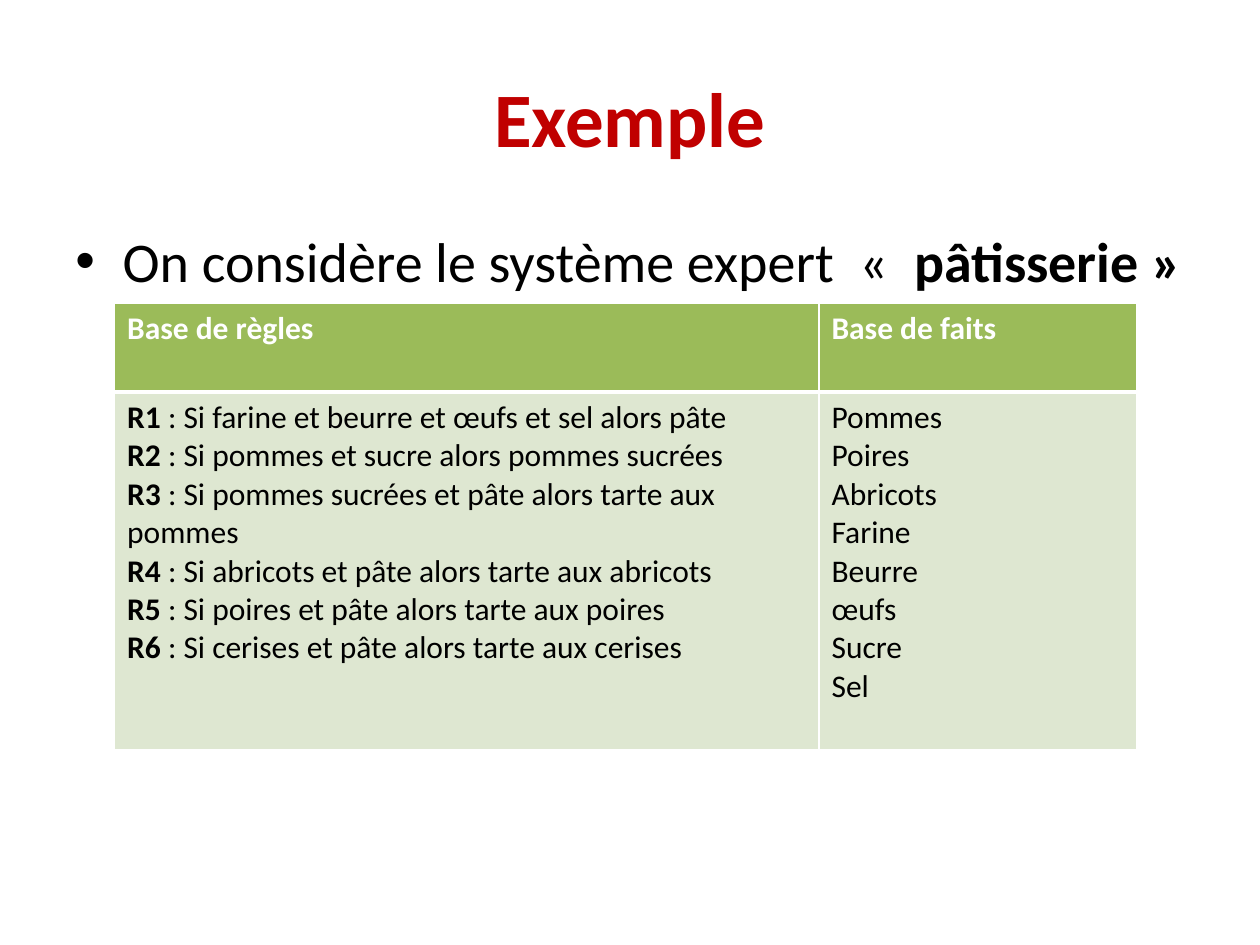
from lxml.etree import SubElement
from pptx import Presentation
from pptx.dml.color import RGBColor
from pptx.enum.text import MSO_ANCHOR, PP_ALIGN
from pptx.oxml.ns import qn
from pptx.util import Pt

COLORS = {"title": "C00000", "text": "000000", "white": "FFFFFF",
          "header": "9BBB59", "body": "DEE7D1"}
FONT = "Calibri"

TITLE = "Exemple"
INTRO = [("On considère le système expert  « ", False), (" pâtisserie »", True)]
HEADINGS = ["Base de règles", "Base de faits"]
RULES = [
    "Si farine et beurre et œufs et sel alors pâte",
    "Si pommes et sucre alors pommes sucrées",
    "Si pommes sucrées et pâte alors tarte aux pommes",
    "Si abricots et pâte alors tarte aux abricots",
    "Si poires et pâte alors tarte aux poires",
    "Si cerises et pâte alors tarte aux cerises",
]
FACTS = ["Pommes", "Poires", "Abricots", "Farine", "Beurre", "œufs", "Sucre", "Sel"]

COLUMN_WIDTHS = [402.5, 181.5]
ROW_HEIGHTS = [50.5, 204.5]
THIN, THICK = 1, 3


def add_spans(para, spans, size, color):
    for text, bold in spans:
        span = para.add_run()
        span.text = text
        span.font.name = FONT
        span.font.size = Pt(size)
        span.font.bold = bold
        span.font.color.rgb = RGBColor.from_string(COLORS[color])


def add_box(page, left, top, width, height, anchor):
    box = page.shapes.add_textbox(Pt(left), Pt(top), Pt(width), Pt(height))
    frame = box.text_frame
    frame.word_wrap = True
    frame.vertical_anchor = anchor
    return frame.paragraphs[0]


def add_bullet(para, indent):
    properties = para._p.get_or_add_pPr()
    properties.set("marL", str(Pt(indent)))
    properties.set("indent", str(-Pt(indent)))
    SubElement(properties, qn("a:buFont"), typeface="Arial")
    SubElement(properties, qn("a:buChar"), char="•")


def add_borders(cell, top, bottom):
    properties = cell._tc.get_or_add_tcPr()
    widths = {"lnL": THIN, "lnR": THIN, "lnT": top, "lnB": bottom}
    for side, width in widths.items():
        line = SubElement(properties, qn(f"a:{side}"), w=str(Pt(width)))
        fill = SubElement(line, qn("a:solidFill"))
        SubElement(fill, qn("a:srgbClr"), val=COLORS["white"])


def fill_cell(cell, lines, fill, color, top, bottom):
    add_borders(cell, top, bottom)
    cell.fill.solid()
    cell.fill.fore_color.rgb = RGBColor.from_string(COLORS[fill])
    frame = cell.text_frame
    for index, spans in enumerate(lines):
        para = frame.add_paragraph() if index else frame.paragraphs[0]
        add_spans(para, spans, 18, color)


def add_knowledge_table(page):
    table = page.shapes.add_table(
        2, 2, Pt(65.5), Pt(173.5), Pt(sum(COLUMN_WIDTHS)), Pt(sum(ROW_HEIGHTS))).table
    for column, width in zip(table.columns, COLUMN_WIDTHS):
        column.width = Pt(width)
    for row, height in zip(table.rows, ROW_HEIGHTS):
        row.height = Pt(height)
    rules = [[(f"R{number}", True), (f" : {rule}", False)]
             for number, rule in enumerate(RULES, 1)]
    facts = [[(fact, False)] for fact in FACTS]
    for column, (heading, lines) in enumerate(zip(HEADINGS, (rules, facts))):
        fill_cell(table.cell(0, column), [[(heading, True)]], "header", "white", THIN, THICK)
        fill_cell(table.cell(1, column), lines, "body", "text", THICK, THIN)


def main():
    deck = Presentation()
    deck.slide_width, deck.slide_height = Pt(720), Pt(540)
    page = deck.slides.add_slide(deck.slide_layouts[6])

    title = add_box(page, 36, 21.6, 648, 90, MSO_ANCHOR.MIDDLE)
    title.alignment = PP_ALIGN.CENTER
    add_spans(title, [(TITLE, True)], 44, "title")

    intro = add_box(page, 36, 126, 648, 356.4, MSO_ANCHOR.TOP)
    intro.space_before = Pt(6.4)
    add_bullet(intro, 27)
    add_spans(intro, INTRO, 32, "text")

    add_knowledge_table(page)
    deck.save("out.pptx")


if __name__ == "__main__":
    main()
